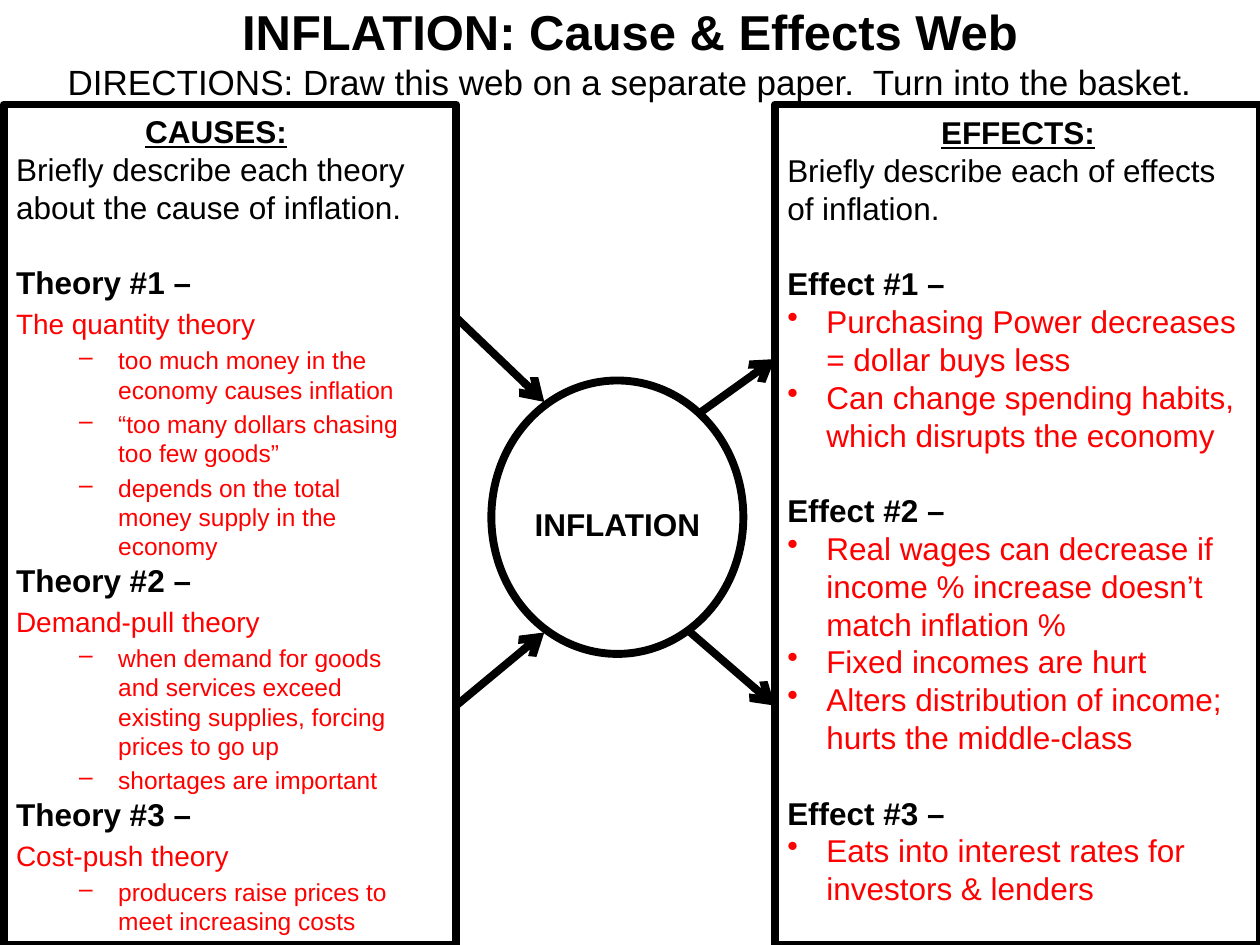
"""Build the inflation cause-and-effect web slide."""
from dataclasses import dataclass

from lxml import etree
from pptx import Presentation
from pptx import util as u
from pptx.dml.color import RGBColor
from pptx.enum import shapes, text
from pptx.oxml.ns import qn

SCALE = 9144
BLACK = RGBColor(0, 0, 0)
RED = RGBColor(255, 0, 0)
FONT = "Arial"
LINE_PT = 4.5


@dataclass(frozen=True)
class Box:
    left: int
    top: int
    width: int
    height: int

    def emu(self) -> list[int]:
        return [v * SCALE for v in (self.left, self.top, self.width, self.height)]


@dataclass(frozen=True)
class Style:
    size: int = 18
    color: RGBColor = BLACK
    bold: bool = False
    underline: bool = False
    centered: bool = False
    before: float = 0
    bullet: str = ""
    margin: int = 0
    level: int = 0


@dataclass(frozen=True)
class Arrow:
    x1: int
    y1: int
    x2: int
    y2: int


HEADING = Style(bold=True, underline=True, centered=True)
BODY = Style()
LABEL = Style(bold=True)
SPACED_LABEL = Style(bold=True, before=21.6)
CENTER = Style(bold=True, centered=True)
THEORY = Style(16, RED, before=3.2)
DETAIL = Style(14, RED, before=2.8, bullet="–", margin=81, level=1)
EFFECT = Style(18, RED, bullet="•", margin=31)
HANGING = -31

CAUSES = [
    ("CAUSES:", HEADING),
    ("Briefly describe each theory about the cause of inflation.", BODY),
    ("Theory #1 –", SPACED_LABEL),
    ("The quantity theory", THEORY),
    ("too much money in the economy causes inflation", DETAIL),
    ("“too many dollars chasing too few goods”", DETAIL),
    ("depends on the total money supply in the economy", DETAIL),
    ("Theory #2 –", LABEL),
    ("Demand-pull theory", THEORY),
    ("when demand for goods and services exceed existing supplies, "
     "forcing prices to go up", DETAIL),
    ("shortages are important", DETAIL),
    ("Theory #3 –", LABEL),
    ("Cost-push theory", THEORY),
    ("producers raise prices to meet increasing costs", DETAIL),
]
EFFECTS = [
    ("EFFECTS:", HEADING),
    ("Briefly describe each of effects of inflation.", BODY),
    ("Effect #1 –", SPACED_LABEL),
    ("Purchasing Power decreases = dollar buys less", EFFECT),
    ("Can change spending habits, which disrupts the economy", EFFECT),
    ("Effect #2 –", SPACED_LABEL),
    ("Real wages can decrease if income % increase doesn’t match inflation %", EFFECT),
    ("Fixed incomes are hurt", EFFECT),
    ("Alters distribution of income; hurts the middle-class", EFFECT),
    ("Effect #3 –", SPACED_LABEL),
    ("Eats into interest rates for investors & lenders", EFFECT),
]
TITLE = [
    ("INFLATION: Cause & Effects Web", Style(28, bold=True, centered=True)),
    ("DIRECTIONS: Draw this web on a separate paper.  Turn into the basket.",
     Style(20, centered=True)),
]
OUTLINES = [
    (shapes.MSO_SHAPE.RECTANGLE, Box(3, 83, 359, 667)),
    (shapes.MSO_SHAPE.RECTANGLE, Box(615, 83, 385, 667)),
    (shapes.MSO_SHAPE.OVAL, Box(390, 302, 200, 217)),
]
TEXTS = [
    (Box(3, 84, 337, 677), CAUSES, text.MSO_ANCHOR.TOP),
    (Box(615, 85, 386, 646), EFFECTS, text.MSO_ANCHOR.TOP),
    (Box(390, 396, 200, 40), [("INFLATION", CENTER)], text.MSO_ANCHOR.TOP),
    (Box(0, 0, 1000, 83), TITLE, text.MSO_ANCHOR.MIDDLE),
]
ARROWS = [
    Arrow(362, 252, 432, 319),
    Arrow(362, 560, 432, 502),
    Arrow(548, 502, 615, 560),
    Arrow(555, 328, 615, 285),
]


def draw_outline(s, kind: shapes.MSO_SHAPE, box: Box) -> None:
    sp = s.shapes.add_shape(kind, *box.emu())
    sp.shadow.inherit = False
    sp.fill.background()
    sp.line.color.rgb = BLACK
    sp.line.width = u.Pt(LINE_PT)


def write_paragraph(p, words: str, style: Style) -> None:
    p.text = words
    p.level = style.level
    p.space_before = u.Pt(style.before)
    p.alignment = text.PP_ALIGN.CENTER if style.centered else text.PP_ALIGN.LEFT
    if style.bullet:
        props = p._p.get_or_add_pPr()
        props.set("marL", str(style.margin * SCALE))
        props.set("indent", str(HANGING * SCALE))
        etree.SubElement(props, qn("a:buChar")).set("char", style.bullet)
    for r in p.runs:
        r.font.name = FONT
        r.font.size = u.Pt(style.size)
        r.font.bold = style.bold
        r.font.underline = style.underline
        r.font.color.rgb = style.color


def draw_text(s, box: Box, lines: list[tuple[str, Style]],
              anchor: text.MSO_ANCHOR) -> None:
    tf = s.shapes.add_textbox(*box.emu()).text_frame
    tf.word_wrap = True
    tf.vertical_anchor = anchor
    for i, (words, style) in enumerate(lines):
        p = tf.add_paragraph() if i else tf.paragraphs[0]
        write_paragraph(p, words, style)


def draw_arrow(s, arrow: Arrow) -> None:
    ends = [v * SCALE for v in (arrow.x1, arrow.y1, arrow.x2, arrow.y2)]
    cn = s.shapes.add_connector(shapes.MSO_CONNECTOR.STRAIGHT, *ends)
    cn.line.color.rgb = BLACK
    cn.line.width = u.Pt(LINE_PT)
    props = cn._element.spPr
    etree.SubElement(props.find(qn("a:ln")), qn("a:tailEnd")).set("type", "arrow")
    etree.SubElement(props, qn("a:effectLst"))


def main() -> None:
    prs = Presentation()
    prs.slide_width, prs.slide_height = 1000 * SCALE, 750 * SCALE
    s = prs.slides.add_slide(prs.slide_layouts[6])
    for kind, box in OUTLINES:
        draw_outline(s, kind, box)
    for box, lines, anchor in TEXTS:
        draw_text(s, box, lines, anchor)
    for arrow in ARROWS:
        draw_arrow(s, arrow)
    prs.save("out.pptx")


if __name__ == "__main__":
    main()
